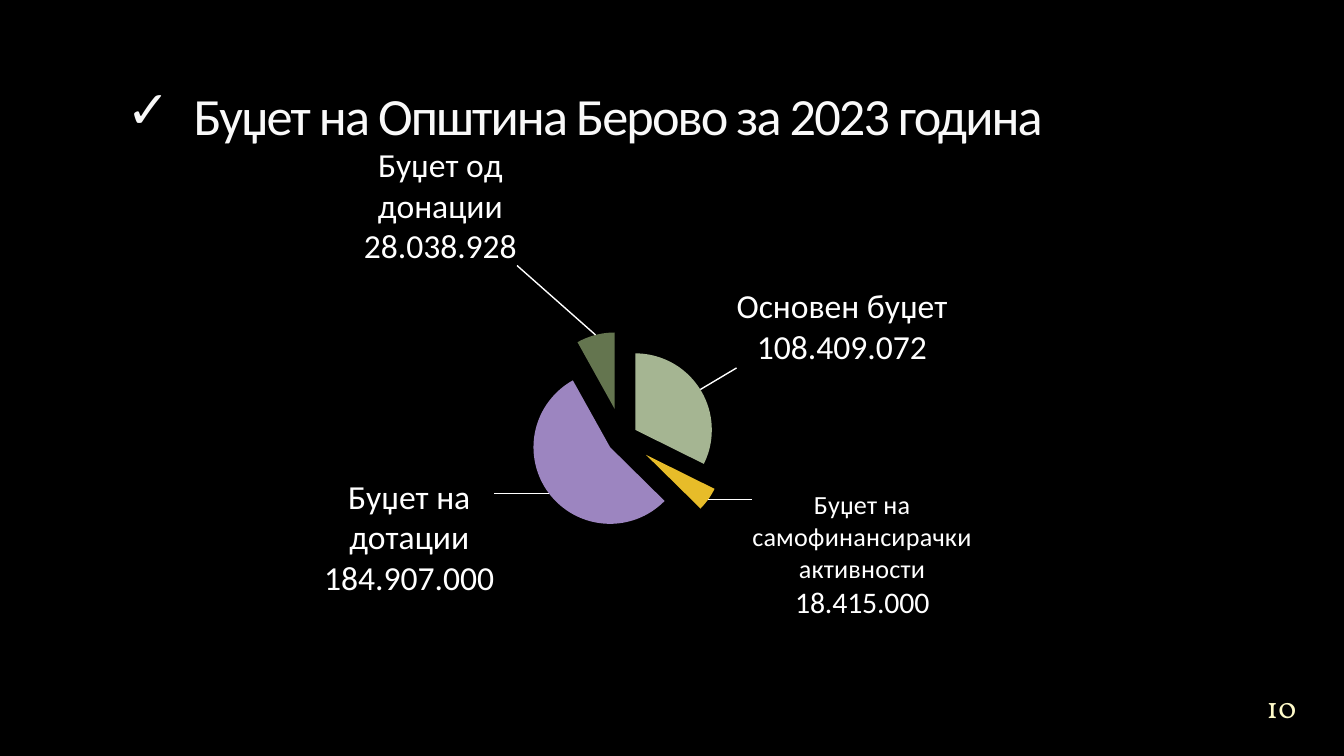
from dataclasses import dataclass

from lxml import etree
from pptx import Presentation
from pptx.chart.data import CategoryChartData
from pptx.dml.color import RGBColor
from pptx.enum.chart import XL_CHART_TYPE, XL_LABEL_POSITION
from pptx.enum.text import MSO_ANCHOR, MSO_AUTO_SIZE, PP_ALIGN
from pptx.oxml import parse_xml
from pptx.oxml.ns import nsdecls, qn
from pptx.util import Inches, Pt

PIE = XL_CHART_TYPE.PIE
OUTSIDE_END = XL_LABEL_POSITION.OUTSIDE_END
LEFT, CENTER = PP_ALIGN.LEFT, PP_ALIGN.CENTER
MIDDLE, BOTTOM = MSO_ANCHOR.MIDDLE, MSO_ANCHOR.BOTTOM
NO_AUTOFIT = MSO_AUTO_SIZE.NONE


@dataclass(frozen=True)
class Theme:
    background: str = "000000"
    title: str = "F9F9F9"
    label: str = "FFFFFF"
    number: str = "FEFAC9"
    font: str = "Calibri"
    number_font: str = "Vollkorn"
    title_size: int = 28
    label_size: int = 18
    number_size: int = 16


THEME = Theme()

SLIDE_WIDTH = 10
SLIDE_HEIGHT = SLIDE_WIDTH * 9 / 16
TITLE = "Буџет на Општина Берово за 2023 година"
SLIDE_NUMBER = "10"
TITLE_BOX = (0.84, 0.29, 9.16, 0.9)
NUMBER_BOX = (9.2, 5.07, 0.67, 0.38)
CHART_BOX = (0.19, 1.08, 9.36, 4.1)
PIE_CENTER = (4.44, 2.18)  # inches inside the chart
PIE_EXTENT = 1.14

# "offset" moves a label from its default place, in inches;
# each label line is (text, size)
SLICES = [
    {"name": "Основен буџет", "value": 32, "color": "A5B592",
     "explosion": 20, "offset": (0.22, -0.13),
     "lines": [("Основен буџет", 18), ("108.409.072", 18)]},
    {"name": "Самофинансирачки активности", "value": 5, "color": "E7BC29",
     "explosion": 38, "offset": (0.28, -0.11),
     "lines": [("Буџет на", 14), ("самофинансирачки", 14),
               ("активности", 14), ("18.415.000", 16)]},
    {"name": "Дотации", "value": 54, "color": "9C85C0",
     "explosion": 20, "offset": (-0.36, -0.16),
     "lines": [("Буџет на", 18), ("дотации", 18), ("184.907.000", 18)]},
    {"name": "Донации", "value": 8, "color": "64754F",
     "explosion": 39, "offset": (-0.57, -0.46),
     "lines": [("Буџет од", 18), ("донации", 18), ("28.038.928", 18)]},
]


def style_font(font, name, size, color):
    font.name = name
    font.size = Pt(size)
    font.bold = False
    font.color.rgb = RGBColor.from_string(color)


def prepare_frame(frame, anchor):
    frame.word_wrap = True
    frame.auto_size = NO_AUTOFIT
    frame.vertical_anchor = anchor
    frame.margin_left = frame.margin_right = Inches(0.1)
    frame.margin_top = frame.margin_bottom = Inches(0.1)


def manual_layout(x, y, width=None, height=None):
    """Return a c:layout element; all values are fractions of the chart."""
    parts = [("x", x), ("y", y)]
    modes = ""
    if width is not None:
        parts += [("w", width), ("h", height)]
        modes = ('<c:layoutTarget val="inner"/>'
                 '<c:xMode val="edge"/><c:yMode val="edge"/>')
    values = "".join(f'<c:{tag} val="{value:.4f}"/>' for tag, value in parts)
    return parse_xml(f'<c:layout {nsdecls("c")}><c:manualLayout>'
                     f'{modes}{values}</c:manualLayout></c:layout>')


def add_title(slide):
    title = slide.shapes.title
    title.left, title.top, title.width, title.height = map(Inches, TITLE_BOX)
    prepare_frame(title.text_frame, BOTTOM)
    paragraph = title.text_frame.paragraphs[0]
    paragraph.alignment = LEFT
    run = paragraph.add_run()
    run.text = TITLE
    style_font(run.font, THEME.font, THEME.title_size, THEME.title)
    run.font._element.set("spc", "-100")
    properties = paragraph._p.get_or_add_pPr()
    properties.set("marL", str(Inches(0.5)))
    properties.set("indent", str(Inches(-0.5)))
    etree.SubElement(properties, qn("a:buFont")).set("typeface", THEME.number_font)
    etree.SubElement(properties, qn("a:buChar")).set("char", "✓")


def add_slide_number(slide):
    box = slide.shapes.add_textbox(*map(Inches, NUMBER_BOX))
    prepare_frame(box.text_frame, MIDDLE)
    paragraph = box.text_frame.paragraphs[0]
    paragraph.alignment = CENTER
    run = paragraph.add_run()
    run.text = SLIDE_NUMBER
    style_font(run.font, THEME.number_font, THEME.number_size, THEME.number)


def format_slice(point, budget):
    point.format.fill.solid()
    point.format.fill.fore_color.rgb = RGBColor.from_string(budget["color"])
    point.format.line.fill.background()
    data_point = point.format._element
    explosion = etree.Element(qn("c:explosion"))
    explosion.set("val", str(budget["explosion"]))
    data_point.find(qn("c:spPr")).addprevious(explosion)

    label = point.data_label
    style_font(label.font, THEME.font, THEME.label_size, THEME.label)
    frame = label.text_frame
    for index, (text, size) in enumerate(budget["lines"]):
        paragraph = frame.paragraphs[0] if index == 0 else frame.add_paragraph()
        paragraph.alignment = CENTER
        run = paragraph.add_run()
        run.text = text
        style_font(run.font, THEME.font, size, THEME.label)
    label.position = OUTSIDE_END


def add_leader_lines(labels):
    element = labels._element
    for switch in element.findall(qn("c:showLeaderLines")):
        element.remove(switch)
    etree.SubElement(element, qn("c:showLeaderLines")).set("val", "1")
    element.append(parse_xml(
        f'<c:leaderLines {nsdecls("c", "a")}><c:spPr><a:ln w="9525"><a:solidFill>'
        f'<a:srgbClr val="{THEME.label}"/></a:solidFill></a:ln></c:spPr>'
        '</c:leaderLines>'))


def add_budget_chart(slide):
    data = CategoryChartData()
    data.categories = [budget["name"] for budget in SLICES]
    data.add_series("Series 1", [budget["value"] for budget in SLICES])
    chart = slide.shapes.add_chart(PIE, *map(Inches, CHART_BOX), data).chart
    chart.has_legend = False
    chart.has_title = False
    style_font(chart.font, THEME.font, THEME.label_size, THEME.label)

    width, height = CHART_BOX[2:]
    plot_area = chart._chartSpace.chart.plotArea
    for layout in plot_area.findall(qn("c:layout")):
        plot_area.remove(layout)
    left, top = (center - PIE_EXTENT / 2 for center in PIE_CENTER)
    plot_area.insert(0, manual_layout(left / width, top / height,
                                      PIE_EXTENT / width, PIE_EXTENT / height))

    plot = chart.plots[0]
    plot.vary_by_categories = True
    series = plot.series[0]
    labels = series.data_labels
    labels.show_value = False
    labels.show_category_name = True
    labels.show_percentage = True
    labels.position = OUTSIDE_END
    style_font(labels.font, THEME.font, THEME.label_size, THEME.label)
    add_leader_lines(labels)
    for index, budget in enumerate(SLICES):
        format_slice(series.points[index], budget)
    for label, budget in zip(labels._element.findall(qn("c:dLbl")), SLICES):
        x, y = budget["offset"]
        label.insert(1, manual_layout(x / width, y / height))


def main():
    presentation = Presentation()
    presentation.slide_width = Inches(SLIDE_WIDTH)
    presentation.slide_height = Inches(SLIDE_HEIGHT)
    slide = presentation.slides.add_slide(presentation.slide_layouts[5])
    slide.background.fill.solid()
    slide.background.fill.fore_color.rgb = RGBColor.from_string(THEME.background)
    add_slide_number(slide)
    add_title(slide)
    add_budget_chart(slide)
    presentation.save("out.pptx")


if __name__ == "__main__":
    main()
